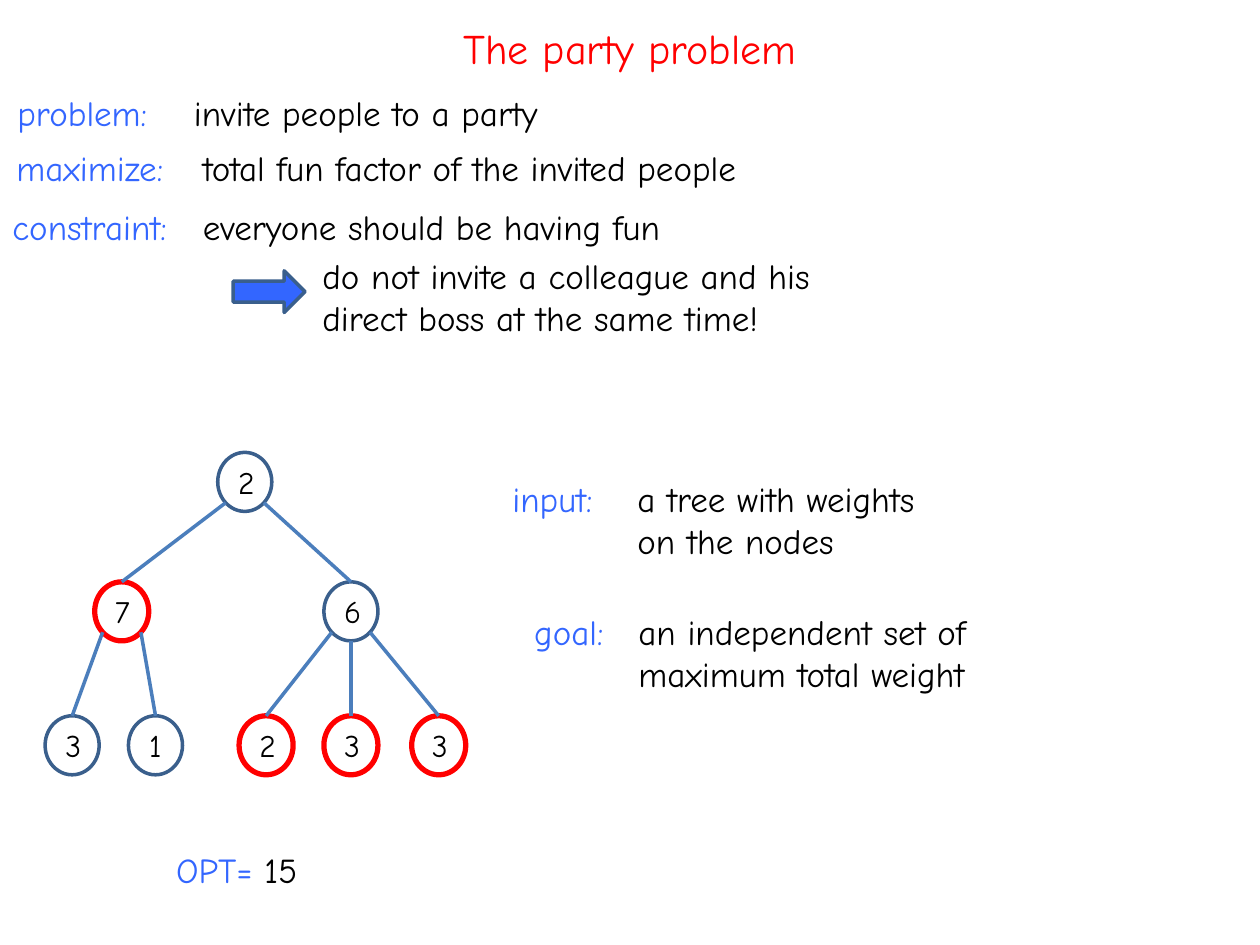
from dataclasses import dataclass
from math import sqrt

from lxml import etree
from pptx import Presentation
from pptx.dml.color import RGBColor
from pptx.enum.shapes import MSO_CONNECTOR, MSO_SHAPE
from pptx.enum.text import MSO_ANCHOR, PP_ALIGN
from pptx.oxml.ns import qn
from pptx.util import Cm, Pt

ELLIPSE, RIGHT_ARROW = MSO_SHAPE.OVAL, MSO_SHAPE.RIGHT_ARROW
STRAIGHT = MSO_CONNECTOR.STRAIGHT
CENTER, LEFT = PP_ALIGN.CENTER, PP_ALIGN.LEFT
MIDDLE = MSO_ANCHOR.MIDDLE


@dataclass(frozen=True)
class Theme:
    """Colours, font, type sizes and line widths of the slide."""
    font: str = "Comic Neue"
    ink: RGBColor = RGBColor(0, 0, 0)
    key: RGBColor = RGBColor(0x33, 0x66, 0xFF)
    accent: RGBColor = RGBColor(0xFF, 0, 0)
    outline: RGBColor = RGBColor(0x3A, 0x5F, 0x8C)
    edge: RGBColor = RGBColor(0x4B, 0x7E, 0xBC)
    title: Pt = Pt(24)
    body: Pt = Pt(20)
    node: Pt = Pt(18)
    thin: Pt = Pt(2)
    thick: Pt = Pt(3)


THEME = Theme()
LINE_HEIGHT, TWO_LINES = 1.12, 1.96
NODE_WIDTH, NODE_HEIGHT = 1.09, 1.19
TREE = [
    ("2", 3.48, 0, False, None),
    ("7", 1.0, 1, True, 0),
    ("6", 5.62, 1, False, 0),
    ("3", 0, 2, False, 1),
    ("1", 1.68, 2, False, 1),
    ("2", 3.91, 2, True, 2),
    ("3", 5.62, 2, True, 2),
    ("3", 7.39, 2, True, 2),
]
LEVEL_TOPS = (0, 2.61, 5.31)


def write(paragraph, runs, size, align=LEFT):
    """Fill a paragraph with (text, colour) runs."""
    paragraph.alignment = align
    for text, color in runs:
        run = paragraph.add_run()
        run.text = text
        for name, value in {"name": THEME.font, "size": size}.items():
            setattr(run.font, name, value)
        run.font.color.rgb = color


def add_text(slide, box, runs, size=THEME.body, align=LEFT):
    """Add a wrapping text box in a (left, top, width, height) box."""
    frame = slide.shapes.add_textbox(*map(Cm, box)).text_frame
    frame.word_wrap = True
    write(frame.paragraphs[0], runs, size, align)


def add_outlined(slide, preset, box, color, width):
    """Add a shadowless preset shape with an outline."""
    shape = slide.shapes.add_shape(preset, *map(Cm, box))
    shape.shadow.inherit = False
    shape.line.color.rgb = color
    shape.line.width = width
    return shape


def add_entry(slide, box, label, label_width, text, indent, height=LINE_HEIGHT):
    """Place a coloured label and its indented text in a box."""
    left, top, width = box
    add_text(slide, (left, top, label_width, LINE_HEIGHT), [(label, THEME.key)])
    add_text(slide, (left + indent, top, width - indent, height), [(text, THEME.ink)])


def add_statement(slide, left, top):
    """Place the problem, its objective and its constraint."""
    rows = [
        (0.1, 0, "problem:", "invite people to a party", 3.56),
        (0.08, 1.09, "maximize:", "total fun factor of the invited people", 3.76),
        (0, 2.29, "constraint:", "everyone should be having fun", 3.84),
    ]
    for shift, drop, label, text, indent in rows:
        add_entry(slide, (left + shift, top + drop, 24.7), label, 3.7, text, indent)
    arrow = add_outlined(slide, RIGHT_ARROW, (left + 4.7, top + 3.73, 1.45, 0.84),
                         THEME.outline, THEME.thin)
    arrow.fill.solid()
    arrow.fill.fore_color.rgb = THEME.key
    add_text(slide, (left + 6.25, top + 3.27, 10.95, TWO_LINES),
             [("do not invite a colleague and his direct boss at the same time!", THEME.ink)])


def add_node(slide, left, top, weight, chosen):
    """Add a weighted tree node, red when it is in the chosen set."""
    color, width = (THEME.accent, THEME.thick) if chosen else (THEME.outline, THEME.thin)
    node = add_outlined(slide, ELLIPSE, (left, top, NODE_WIDTH, NODE_HEIGHT), color, width)
    node.fill.background()
    node.text_frame.vertical_anchor = MIDDLE
    write(node.text_frame.paragraphs[0], [(weight, THEME.ink)], THEME.node, CENTER)
    return node


def add_edge(slide, parent, child):
    """Join the top of a child to the lower rim of its parent."""
    side = (child.left > parent.left) - (child.left < parent.left)
    reach = 1 / sqrt(2) if side else 1
    x = parent.left + int(parent.width / 2 * (1 + side * reach))
    y = parent.top + int(parent.height / 2 * (1 + reach))
    edge = slide.shapes.add_connector(STRAIGHT, 0, 0, x, y)
    edge.begin_connect(child, 0)
    edge.line.color.rgb = THEME.edge
    edge.line.width = THEME.thin
    etree.SubElement(edge._element.spPr, qn("a:effectLst"))


def add_tree(slide, left, top):
    """Place the weighted tree, its edges and the optimum value."""
    nodes = [add_node(slide, left + x, top + LEVEL_TOPS[level], weight, chosen)
             for weight, x, level, chosen, _ in TREE]
    for child, (*_, parent) in zip(nodes, TREE):
        if parent is not None:
            add_edge(slide, nodes[parent], child)
    add_text(slide, (left + 2.39, top + 7.87, 6.91, LINE_HEIGHT),
             [("OPT= ", THEME.key), ("15", THEME.ink)])


def add_task(slide, left, top):
    """Place the input and the goal beside the tree."""
    add_entry(slide, (left, top, 9.43), "input:", 2.52,
              "a tree with weights on the nodes", 2.52, TWO_LINES)
    add_entry(slide, (left + 0.44, top + 2.69, 10.79), "goal:", 2.31,
              "an independent set of maximum total weight", 2.1, TWO_LINES)


def main():
    """Build and save the slide."""
    deck = Presentation()
    deck.slide_width, deck.slide_height = Cm(25.4), Cm(19.05)
    slide = deck.slides.add_slide(deck.slide_layouts[6])
    add_text(slide, (4.55, 0.33, 16.3, 2.39), [("The party problem", THEME.accent)],
             THEME.title, CENTER)
    add_statement(slide, 0, 1.73)
    add_tree(slide, 0.91, 9.12)
    add_task(slide, 10.08, 9.5)
    deck.save("out.pptx")


if __name__ == "__main__":
    main()
